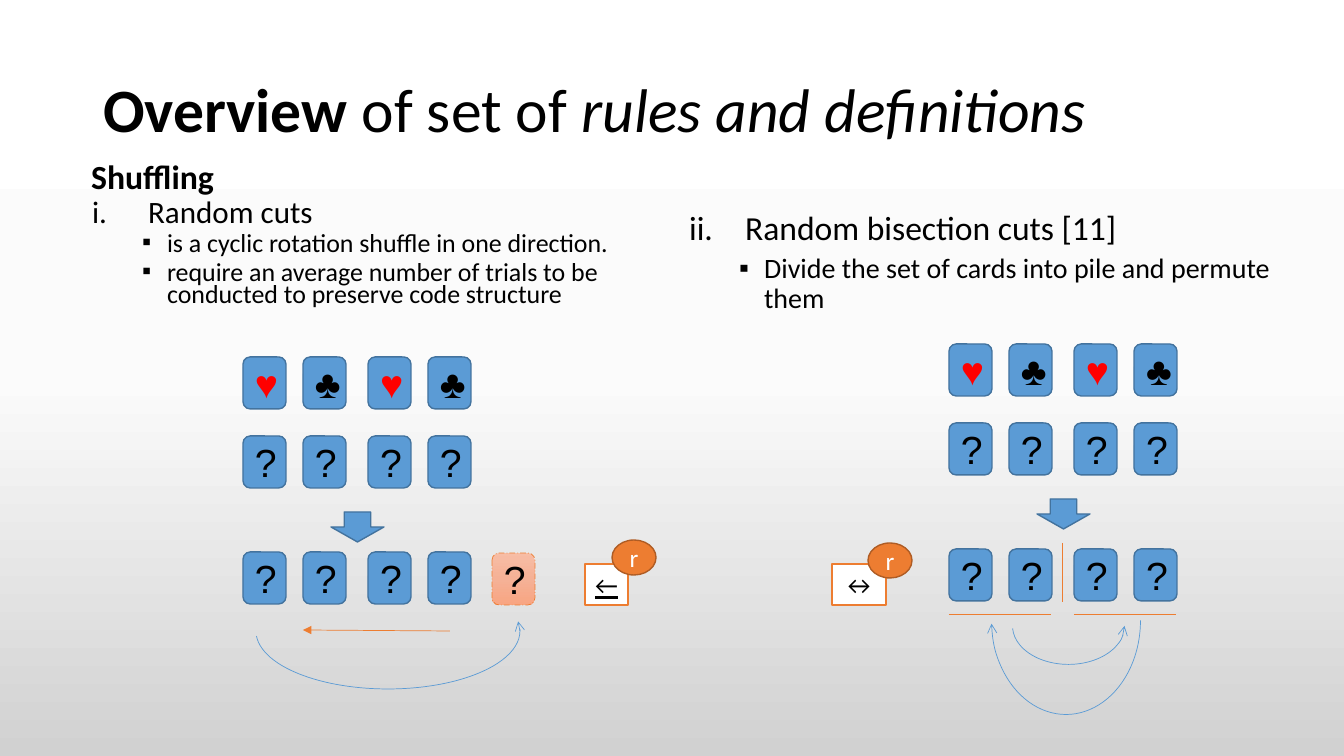
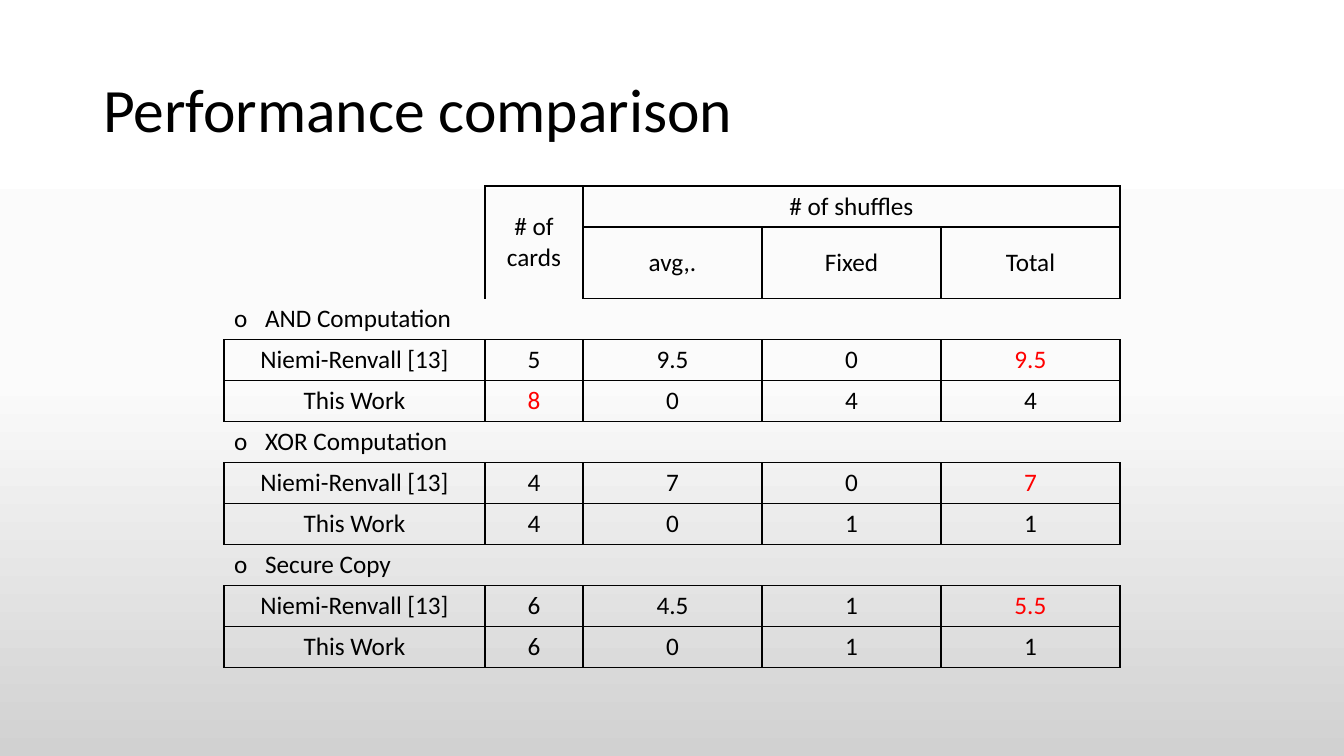
"""Builds two slides on card shuffling: the shuffle rules and a performance comparison."""
from copy import deepcopy

from lxml.etree import SubElement
from pptx import Presentation
from pptx.dml.color import RGBColor
from pptx.enum.dml import MSO_LINE
from pptx.enum.shapes import MSO_CONNECTOR, MSO_SHAPE
from pptx.enum.text import MSO_ANCHOR, MSO_AUTO_SIZE, PP_ALIGN
from pptx.oxml.ns import qn
from pptx.util import Pt

PX = 9071
BLACK, WHITE, RED = "000000", "FFFFFF", "FF0000"
BLUE, BLUE_EDGE = "5B9BD5", "43739E"
ORANGE, ORANGE_EDGE = "ED7D31", "AF5C24"
rgb = RGBColor.from_string


def format_runs(paragraph, size, colour=BLACK, name="Calibri"):
    for run in paragraph.runs:
        run.font.size = Pt(size)
        run.font.name = name
        run.font.color.rgb = rgb(colour)


def add_shape(slide, kind, box, fill, edge, width=1, text="", size=18, colour=BLACK, name="Calibri"):
    shape = slide.shapes.add_shape(kind, *[length * PX for length in box])
    shape.shadow.inherit = False
    if fill:
        shape.fill.solid()
        shape.fill.fore_color.rgb = rgb(fill)
    else:
        shape.fill.background()
    shape.line.color.rgb = rgb(edge)
    shape.line.width = Pt(width)
    if text:
        frame = shape.text_frame
        frame.text = text
        frame.vertical_anchor = MSO_ANCHOR.MIDDLE
        frame.paragraphs[0].alignment = PP_ALIGN.CENTER
        format_runs(frame.paragraphs[0], size, colour, name)
    return shape


presentation = Presentation()
presentation.slide_width = 1344 * PX
presentation.slide_height = 756 * PX
master = presentation.slide_master
gradients = [(master.element, master.background.fill, ("FFFFFF", "FBFBFB", "D1D1D1"))]
bullets = []
line_ends = []

titles = [
    (3, [("Overview", True, False), (" of set of ", False, False), ("rules and definitions", False, True)]),
    (5, [("Performance comparison", False, False)]),
]
slides = []
for layout_index, parts in titles:
    slide = presentation.slides.add_slide(presentation.slide_layouts[layout_index])
    title = slide.shapes.title
    title.left, title.top, title.width, title.height = [length * PX for length in (93, 40, 1159, 146)]
    title.text_frame.auto_size = MSO_AUTO_SIZE.NONE
    title.text_frame.vertical_anchor = MSO_ANCHOR.MIDDLE
    paragraph = title.text_frame.paragraphs[0]
    paragraph.alignment = PP_ALIGN.LEFT
    paragraph.line_spacing = 0.9
    for text, bold, italic in parts:
        run = paragraph.add_run()
        run.text = text
        run.font.bold = bold
        run.font.italic = italic
    format_runs(paragraph, 44)
    slides.append(slide)
rules_slide, comparison_slide = slides

heading = (0, 50, 0, "buNone", {})
square = (1, 126, -25, "buChar", {"char": "▪"})
first_item = (0, 107, -56, "buAutoNum", {"type": "romanLcPeriod"})
second_item = (0, 107, -56, "buAutoNum", {"type": "romanLcPeriod", "startAt": "2"})
columns = [
    (1, (31, 162, 638, 167), 0.7, [
        ("Shuffling", 24.1, heading),
        ("Random cuts", 22.2, first_item),
        ("is a cyclic rotation shuffle in one direction.", 18.5, square),
        ("require an average number of trials to be conducted to preserve code structure", 18.5, square),
    ]),
    (2, (628, 206, 689, 125), 0.9, [
        ("Random bisection cuts [11]", 24, second_item),
        ("Divide the set of cards into pile and permute them", 20, square),
    ]),
]
for index, box, spacing, lines in columns:
    body = rules_slide.placeholders[index]
    body.left, body.top, body.width, body.height = [length * PX for length in box]
    frame = body.text_frame
    frame.auto_size = MSO_AUTO_SIZE.NONE
    frame.text = "\n".join(text for text, size, style in lines)
    for paragraph, (text, size, style) in zip(frame.paragraphs, lines):
        level, margin, indent, tag, attributes = style
        paragraph.level = level
        paragraph.line_spacing = spacing
        paragraph.space_before = Pt(5)
        paragraph.runs[0].font.bold = style is heading
        format_runs(paragraph, size)
        bullets.append((paragraph, margin, indent, "Arial", tag, attributes))

card_offsets = (0, 60, 125, 185)
for left, row_tops, arrow_top in ((243, (357, 436, 552), 512), (949, (344, 423, 549), 499)):
    for top, faces in zip(row_tops, ("♥♣♥♣", "????", "????")):
        for offset, face in zip(card_offsets, faces):
            add_shape(rules_slide, MSO_SHAPE.ROUNDED_RECTANGLE, (left + offset, top, 43, 52), BLUE, BLUE_EDGE,
                      text=face, size=28, colour=RED if face == "♥" else BLACK, name="Arial")
    add_shape(rules_slide, MSO_SHAPE.DOWN_ARROW, (left + 88, arrow_top, 53, 30), BLUE, BLUE_EDGE)

moved_card = add_shape(rules_slide, MSO_SHAPE.ROUNDED_RECTANGLE, (492, 553, 43, 52), WHITE, ORANGE, 0.5,
                       text="?", size=28, name="Arial")
moved_card.line.dash_style = MSO_LINE.LONG_DASH_DOT
gradients.append((moved_card.element, moved_card.fill, ("F7BDA5", "F5B196", "F8A582")))

arcs = [
    ((972, 546, 188, 149), 90, (162, 52.51), "tailEnd"),
    ((256, 573, 264, 116), 0, (213.47, 106.67), "headEnd"),
    ((1030, 570, 77, 112), 90, (162, 52.51), "headEnd"),
]
for box, rotation, angles, end in arcs:
    arc = add_shape(rules_slide, MSO_SHAPE.ARC, box, None, BLUE, 0.5)
    arc.rotation = rotation
    arc.adjustments[0], arc.adjustments[1] = angles
    line_ends.append((arc, end, "arrow"))

segments = [(1062, 543, 1062, 602), (949, 614, 1051, 614), (1074, 614, 1176, 614), (450, 631, 303, 630)]
for segment in segments:
    connector = rules_slide.shapes.add_connector(MSO_CONNECTOR.STRAIGHT, *[length * PX for length in segment])
    connector.line.color.rgb = rgb(ORANGE)
    connector.line.width = Pt(0.5)
    SubElement(connector.element.spPr, qn("a:effectLst"))
line_ends.append((connector, "tailEnd", "triangle"))

operations = [("↔", (832, 564, 54, 41), (868, 543, 44, 35)), ("←", (585, 564, 43, 41), (612, 540, 44, 35))]
for symbol, symbol_box, badge_box in operations:
    operation = add_shape(rules_slide, MSO_SHAPE.RECTANGLE, symbol_box, WHITE, ORANGE, text=symbol)
    operation.text_frame.word_wrap = False
    operation.text_frame.paragraphs[0].runs[0].font.underline = symbol == "←"
    add_shape(rules_slide, MSO_SHAPE.OVAL, badge_box, ORANGE, ORANGE_EDGE, text="r", colour=WHITE)

rows = [
    ("", "# of cards", "# of shuffles", "", ""),
    ("", "", "avg,.", "Fixed", "Total"),
    ("AND Computation", "", "", "", ""),
    ("Niemi-Renvall [13]", "5", "9.5", "0", "9.5"),
    ("This Work", "8", "0", "4", "4"),
    ("XOR Computation", "", "", "", ""),
    ("Niemi-Renvall [13]", "4", "7", "0", "7"),
    ("This Work", "4", "0", "1", "1"),
    ("Secure Copy", "", "", "", ""),
    ("Niemi-Renvall [13]", "6", "4.5", "1", "5.5"),
    ("This Work", "6", "0", "1", "1"),
]
group_rows = (2, 5, 8)
red_cells = ((3, 4), (4, 1), (6, 4), (9, 4))
column_widths = (261, 98, 179, 179, 179)
table_box = (224, 186, sum(column_widths), 41 * len(rows))
table_frame = comparison_slide.shapes.add_table(len(rows), 5, *[length * PX for length in table_box])
table = table_frame.table
table.first_row = False
table.horz_banding = False
table_frame.element.find(".//" + qn("a:tableStyleId")).text = "{2D5ABB26-0587-4C30-8999-92F81FD0307C}"
for column, width in zip(table.columns, column_widths):
    column.width = width * PX
for row in table.rows:
    row.height = 41 * PX
merges = [(0, 0, 1, 0), (0, 1, 1, 1), (0, 2, 0, 4)] + [(row, 0, row, 4) for row in group_rows]
for top, left, bottom, right in merges:
    table.cell(top, left).merge(table.cell(bottom, right))

for row_index, values in enumerate(rows):
    for column_index, value in enumerate(values):
        cell = table.cell(row_index, column_index)
        in_group = row_index in group_rows
        if not in_group and (row_index > 1 or column_index > 0):
            for side in ("lnL", "lnR", "lnT") + (("lnB",) if row_index > 1 else ()):
                border = SubElement(cell._tc.get_or_add_tcPr(), qn("a:" + side), w=str(Pt(1)))
                SubElement(SubElement(border, qn("a:solidFill")), qn("a:srgbClr"), val=BLACK)
        cell.fill.background()
        cell.vertical_anchor = MSO_ANCHOR.MIDDLE
        if value:
            cell.text_frame.text = value
            paragraph = cell.text_frame.paragraphs[0]
            paragraph.alignment = PP_ALIGN.LEFT if in_group else PP_ALIGN.CENTER
            format_runs(paragraph, 18, RED if (row_index, column_index) in red_cells else BLACK)
            if in_group:
                bullets.append((paragraph, 31, -31, "Calibri", "buChar", {"char": "o"}))

for paragraph, margin, indent, typeface, tag, attributes in bullets:
    properties = paragraph._p.get_or_add_pPr()
    properties.set("marL", str(margin * PX))
    properties.set("indent", str(indent * PX))
    SubElement(properties, qn("a:buFont"), typeface=typeface)
    SubElement(properties, qn("a:" + tag), **attributes)

for shape, end, kind in line_ends:
    SubElement(shape.element.spPr.find(qn("a:ln")), qn("a:" + end), type=kind)

for element, fill, colours in gradients:
    fill.gradient()
    fill.gradient_angle = 270
    stops = element.find(".//" + qn("a:gsLst"))
    middle = deepcopy(stops[0])
    middle.set("pos", "50000")
    stops.insert(1, middle)
    for stop, colour in zip(fill.gradient_stops, colours):
        stop.color.rgb = rgb(colour)

presentation.save("out.pptx")
